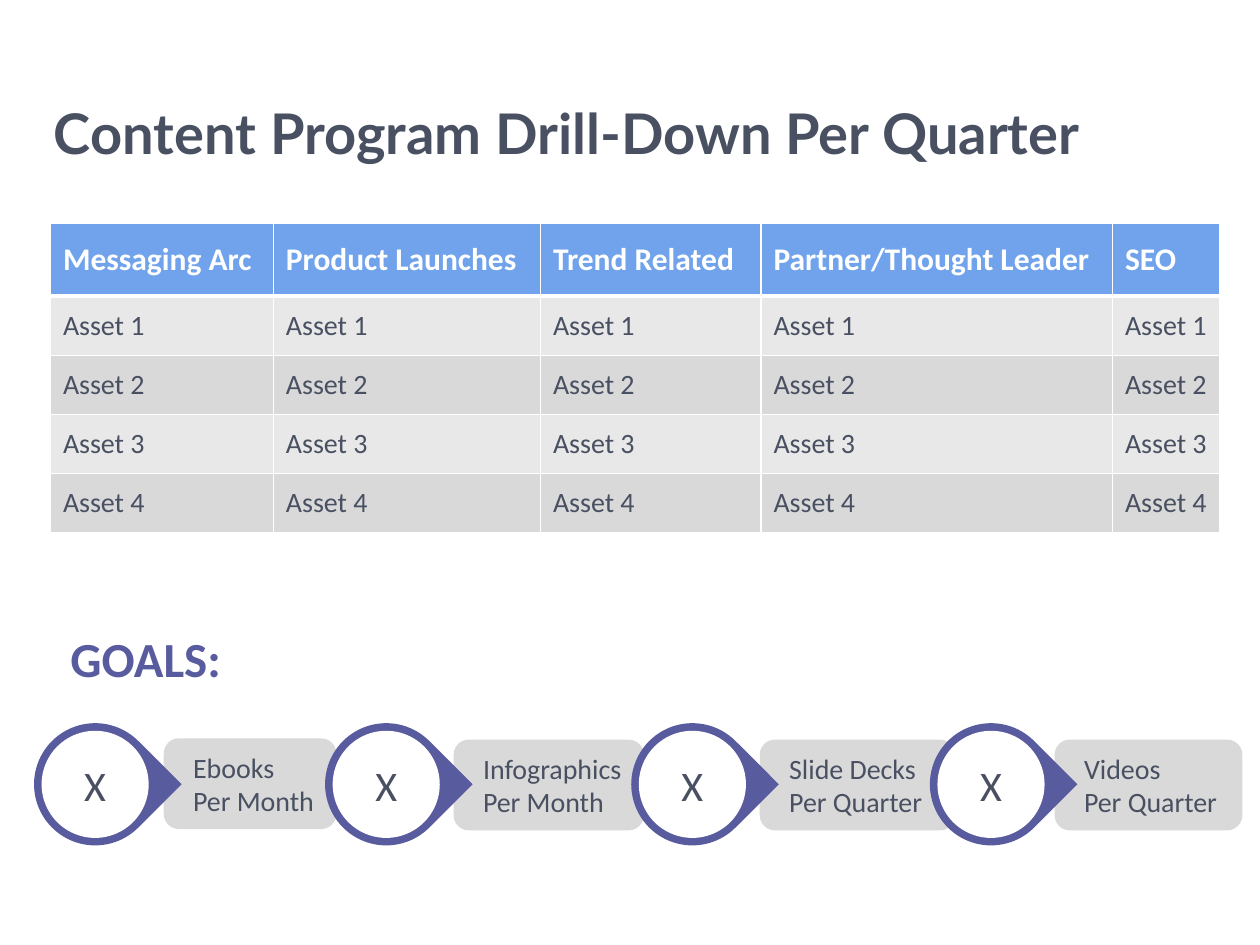
from dataclasses import dataclass

from lxml.etree import SubElement
from pptx import Presentation
from pptx.dml.color import RGBColor
from pptx.enum.shapes import MSO_SHAPE
from pptx.enum.text import MSO_ANCHOR, PP_ALIGN
from pptx.oxml.ns import qn
from pptx.util import Inches, Pt

COLORS = {
    "ink": "495061",
    "purple": "595B9F",
    "blue": "70A3EB",
    "light": "E8E8E8",
    "grey": "D9D9D9",
    "white": "FFFFFF",
}


@dataclass
class Goal:
    left: float
    label_left: float
    label_top: float
    label_width: float
    label: str


GOALS = [
    Goal(0.27, 1.3, 5.86, 1.37, "Ebooks\nPer Month"),
    Goal(2.58, 3.6, 5.87, 1.51, "Infographics\nPer Month"),
    Goal(5.01, 6.03, 5.87, 1.55, "Slide Decks\nPer Quarter"),
    Goal(7.38, 8.37, 5.87, 1.49, "Videos\nPer Quarter"),
]
COLUMNS = {
    "Messaging Arc": 1.77,
    "Product Launches": 2.12,
    "Trend Related": 1.75,
    "Partner/Thought Leader": 2.79,
    "SEO": 0.85,
}
ASSET_COUNT = 4
HEADER_HEIGHT, ROW_HEIGHT = 0.58, 0.47
DROP_TOP, DROP_SIZE = 5.74, 0.97
DISC_SIZE, DISC_INSET = 0.85, 0.06


def color(name: str) -> RGBColor:
    return RGBColor.from_string(COLORS[name])


def write(frame, text: str, *, size: float, font: str = "Calibri", ink: str = "ink",
          bold: bool = False, align=PP_ALIGN.LEFT, anchor=MSO_ANCHOR.MIDDLE,
          indent: float = 0) -> None:
    """Fill a text frame, one paragraph for each line of text."""
    frame.word_wrap = True
    frame.vertical_anchor = anchor
    for index, line in enumerate(text.split("\n")):
        para = frame.add_paragraph() if index else frame.paragraphs[0]
        para.alignment = align
        if indent:
            properties = para._p.get_or_add_pPr()
            properties.set("marL", str(Inches(indent)))
            properties.set("indent", "0")
        span = para.add_run()
        span.text = line
        span.font.name = font
        span.font.size = Pt(size)
        span.font.bold = bold
        span.font.color.rgb = color(ink)


def add_text(page, left: float, top: float, width: float, height: float,
             text: str, **style) -> None:
    box = page.shapes.add_textbox(Inches(left), Inches(top), Inches(width), Inches(height))
    write(box.text_frame, text, anchor=MSO_ANCHOR.TOP, bold=True, **style)


def add_block(page, kind, left: float, top: float, width: float, height: float, fill: str):
    block = page.shapes.add_shape(
        kind, Inches(left), Inches(top), Inches(width), Inches(height))
    block.shadow.inherit = False
    block.fill.solid()
    block.fill.fore_color.rgb = color(fill)
    block.line.fill.background()
    return block


def set_borders(cell, **widths: float) -> None:
    """Draw white cell borders; they must come before the fill in the XML."""
    properties = cell._tc.get_or_add_tcPr()
    for index, side in enumerate("LRTB"):
        line = SubElement(properties, qn(f"a:ln{side}"), w=str(Pt(widths.get(side, 1))))
        fill = SubElement(line, qn("a:solidFill"))
        SubElement(fill, qn("a:srgbClr"), val=COLORS["white"])
        properties.insert(index, line)


def add_asset_table(page) -> None:
    rows = [list(COLUMNS)]
    rows += [[f"Asset {number}"] * len(COLUMNS) for number in range(1, ASSET_COUNT + 1)]
    table = page.shapes.add_table(
        len(rows), len(COLUMNS), Inches(0.4), Inches(1.77),
        Inches(sum(COLUMNS.values())),
        Inches(HEADER_HEIGHT + ASSET_COUNT * ROW_HEIGHT)).table
    for column, width in zip(table.columns, COLUMNS.values()):
        column.width = Inches(width)
    for r, texts in enumerate(rows):
        header = r == 0
        table.rows[r].height = Inches(HEADER_HEIGHT if header else ROW_HEIGHT)
        fill = "blue" if header else ("light" if r % 2 else "grey")
        for c, text in enumerate(texts):
            cell = table.cell(r, c)
            cell.fill.solid()
            cell.fill.fore_color.rgb = color(fill)
            write(cell.text_frame, text, size=18 if header else 16,
                  ink="white" if header else "ink", bold=header)
            cell.vertical_anchor = MSO_ANCHOR.MIDDLE
            set_borders(cell, B=3 if header else 1, T=3 if r == 1 else 1)


def add_goal_label(page, goal: Goal) -> None:
    pill = add_block(page, MSO_SHAPE.ROUNDED_RECTANGLE, goal.label_left, goal.label_top,
                     goal.label_width, 0.72, "grey")
    write(pill.text_frame, goal.label, size=16, indent=0.1)


def add_goal_marker(page, goal: Goal) -> None:
    drop = add_block(page, MSO_SHAPE.TEAR, goal.left, DROP_TOP, DROP_SIZE, DROP_SIZE, "purple")
    drop.rotation = 45
    disc = add_block(page, MSO_SHAPE.OVAL, goal.left + DISC_INSET, DROP_TOP + DISC_INSET,
                     DISC_SIZE, DISC_SIZE, "white")
    write(disc.text_frame, "X", size=24, align=PP_ALIGN.CENTER)


def main() -> None:
    deck = Presentation()
    deck.slide_width, deck.slide_height = Inches(10), Inches(7.5)
    page = deck.slides.add_slide(deck.slide_layouts[6])

    # Goal labels lie behind the markers
    for goal in reversed(GOALS):
        add_goal_label(page, goal)

    # Title and table
    add_text(page, 0.33, 0.73, 9.42, 0.77, "Content Program Drill-Down Per Quarter",
             size=32, font="Lato")
    add_asset_table(page)

    # Goals
    add_text(page, 0.46, 4.94, 2.12, 0.57, "GOALS:", size=28, ink="purple")
    for goal in GOALS:
        add_goal_marker(page, goal)

    deck.save("out.pptx")


if __name__ == "__main__":
    main()
